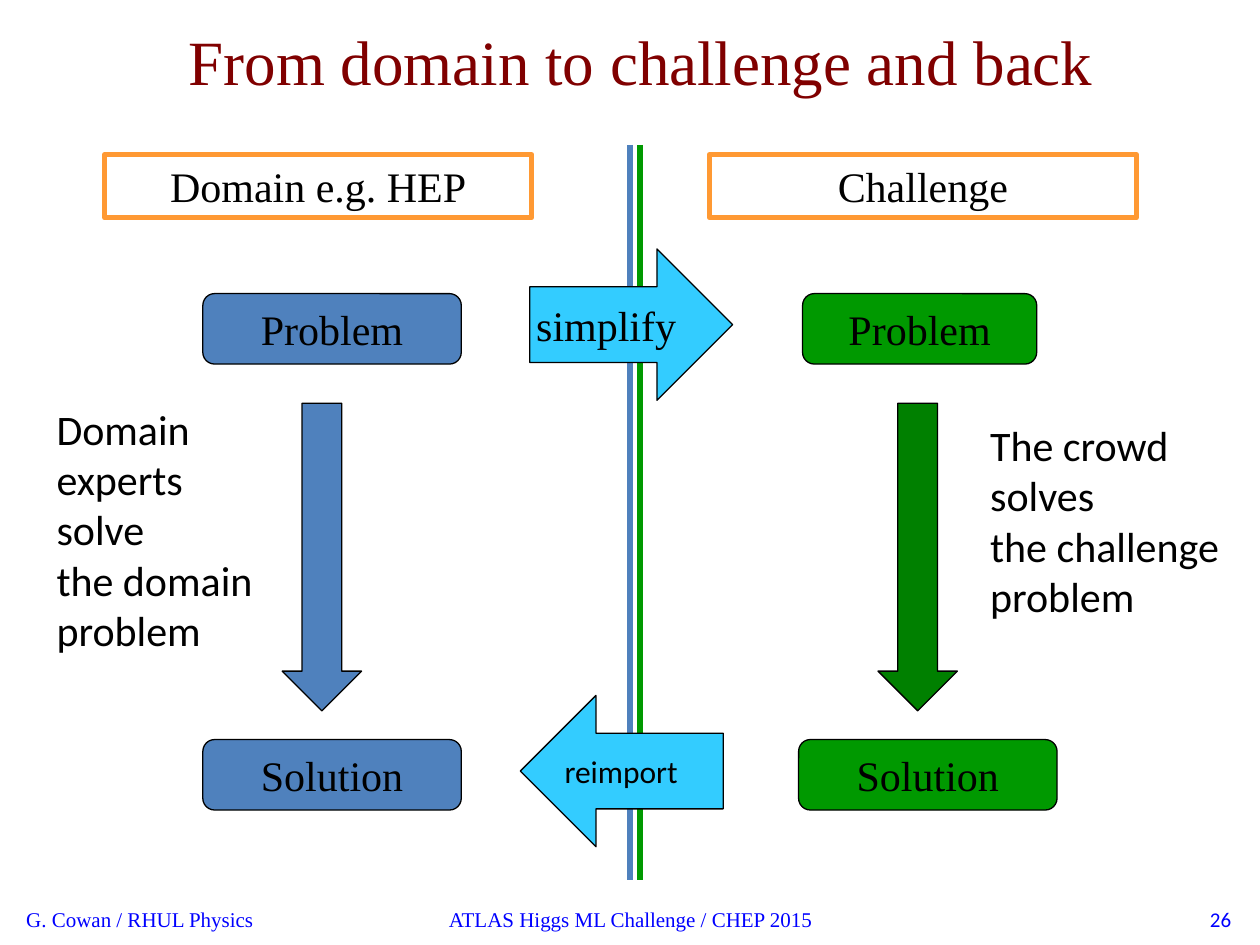
"""Build the slide showing the loop between a science domain and a challenge."""
from dataclasses import dataclass

from lxml.etree import SubElement
from pptx import Presentation
from pptx.dml.color import RGBColor
from pptx.enum.shapes import MSO_CONNECTOR, MSO_SHAPE
from pptx.enum.text import MSO_ANCHOR, PP_ALIGN
from pptx.oxml.ns import qn
from pptx.util import Cm, Pt


@dataclass(frozen=True)
class Theme:
    """Colours, fonts and type sizes of the slide."""
    title: str = "800000"
    footer: str = "0000FF"
    ink: str = "000000"
    domain: str = "4F81BD"
    challenge: str = "009900"
    crowd: str = "008000"
    header: str = "FF9933"
    transfer: str = "33CCFF"
    serif: str = "Times New Roman"
    sans: str = "Calibri"
    title_size: int = 36
    body_size: int = 24
    small_size: int = 18
    footer_size: int = 12
    outline: float = 0.75
    rule: float = 3


class SlideBuilder:
    """Draws styled elements on the current slide."""

    def __init__(self, slide, theme):
        """Keep the slide and its style."""
        self.slide = slide
        self.theme = theme

    def set_lines(self, frame, lines, font, size, color, align, anchor):
        """Fill a text frame with one paragraph per line."""
        frame.vertical_anchor = anchor
        frame.text = "\n".join(lines)
        for paragraph in frame.paragraphs:
            paragraph.alignment = align
            paragraph.font.name = font
            paragraph.font.size = Pt(size)
            paragraph.font.color.rgb = RGBColor.from_string(color)

    def text(self, box, lines, font, size, color, align=PP_ALIGN.LEFT,
             anchor=MSO_ANCHOR.TOP, wrap=True):
        """Add a text box."""
        frame = self.slide.shapes.add_textbox(*map(Cm, box)).text_frame
        frame.word_wrap = wrap
        self.set_lines(frame, lines, font, size, color, align, anchor)

    def footer(self, box, line, font, align):
        """Add one part of the footer."""
        self.text(box, [line], font, self.theme.footer_size, self.theme.footer,
                  align, MSO_ANCHOR.MIDDLE)

    def note(self, box, lines):
        """Add an unwrapped comment beside an arrow."""
        self.text(box, lines, self.theme.sans, self.theme.body_size,
                  self.theme.ink, wrap=False)

    def shape(self, kind, box, fill=None, line=None, width=None):
        """Add a preset shape with flat fill and outline."""
        shape = self.slide.shapes.add_shape(kind, *map(Cm, box))
        shape.shadow.inherit = False
        if fill:
            shape.fill.solid()
            shape.fill.fore_color.rgb = RGBColor.from_string(fill)
        else:
            shape.fill.background()
        shape.line.color.rgb = RGBColor.from_string(line or self.theme.ink)
        shape.line.width = Pt(width or self.theme.outline)
        return shape

    def label(self, shape, line):
        """Centre a serif label in a shape."""
        self.set_lines(shape.text_frame, [line], self.theme.serif,
                       self.theme.body_size, self.theme.ink, PP_ALIGN.CENTER,
                       MSO_ANCHOR.TOP)

    def header(self, box, line):
        """Add a framed column header."""
        frame = self.shape(MSO_SHAPE.RECTANGLE, box, line=self.theme.header,
                           width=self.theme.rule)
        self.label(frame, line)

    def stage(self, box, line, fill):
        """Add a rounded stage box."""
        self.label(self.shape(MSO_SHAPE.ROUNDED_RECTANGLE, box, fill), line)

    def transfer(self, kind, box, line, font, size):
        """Add a block arrow crossing the divider."""
        frame = self.shape(kind, box, self.theme.transfer).text_frame
        frame.word_wrap = False
        frame.margin_left = Cm(0.13)
        self.set_lines(frame, [line], font, size, self.theme.ink,
                       PP_ALIGN.LEFT, MSO_ANCHOR.MIDDLE)

    def divider(self, x, top, bottom, color):
        """Add a vertical rule."""
        rule = self.slide.shapes.add_connector(
            MSO_CONNECTOR.STRAIGHT, Cm(x), Cm(top), Cm(x), Cm(bottom))
        rule.line.color.rgb = RGBColor.from_string(color)
        rule.line.width = Pt(self.theme.rule)
        SubElement(rule._element.spPr, qn("a:effectLst"))


def main():
    """Compose and save the slide."""
    deck = Presentation()
    deck.slide_width, deck.slide_height = Cm(25.4), Cm(19.05)
    theme = Theme()
    page = SlideBuilder(deck.slides.add_slide(deck.slide_layouts[6]), theme)

    footer_top, footer_height = 18.01, 1.02
    for left, width, line, font, align in (
        (8.69, 8.05, "ATLAS Higgs ML Challenge / CHEP 2015", theme.serif, PP_ALIGN.CENTER),
        (19.15, 5.92, "26", theme.sans, PP_ALIGN.RIGHT),
        (0.28, 5.92, "G. Cowan / RHUL Physics", theme.serif, PP_ALIGN.LEFT),
    ):
        page.footer((left, footer_top, width, footer_height), line, font, align)
    page.text((1.07, 0.33, 23.7, 1.7), ["From domain to challenge and back"],
              theme.serif, theme.title_size, theme.title, PP_ALIGN.CENTER)

    for x, color in ((12.7, theme.domain), (12.9, theme.challenge)):
        page.divider(x, 2.92, 17.73, color)

    for left, line in ((2.11, "Domain e.g. HEP"), (14.3, "Challenge")):
        page.header((left, 3.12, 8.61, 1.27), line)

    problem_top, solution_top, stage_height = 5.92, 14.91, 1.42
    for left, top, width, line, fill in (
        (4.09, problem_top, 5.21, "Problem", theme.domain),
        (4.09, solution_top, 5.21, "Solution", theme.domain),
        (16.18, problem_top, 4.72, "Problem", theme.challenge),
        (16.1, solution_top, 5.21, "Solution", theme.challenge),
    ):
        page.stage((left, top, width, stage_height), line, fill)

    for left, fill in ((5.69, theme.domain), (17.7, theme.crowd)):
        page.shape(MSO_SHAPE.DOWN_ARROW, (left, 8.13, 1.6, 6.2), fill)

    page.note((0.89, 8.0, 4.5, 5.38),
              ["Domain", "experts", "solve", "the domain", "problem"])
    page.note((19.71, 8.33, 5.18, 4.37),
              ["The crowd", "solves", "the challenge", "problem"])

    page.transfer(MSO_SHAPE.RIGHT_ARROW, (10.68, 5.02, 4.09, 3.05), "simplify",
                  theme.serif, theme.body_size)
    page.transfer(MSO_SHAPE.LEFT_ARROW, (10.49, 14.02, 4.09, 3.05), "reimport",
                  theme.sans, theme.small_size)

    deck.save("out.pptx")


if __name__ == "__main__":
    main()
